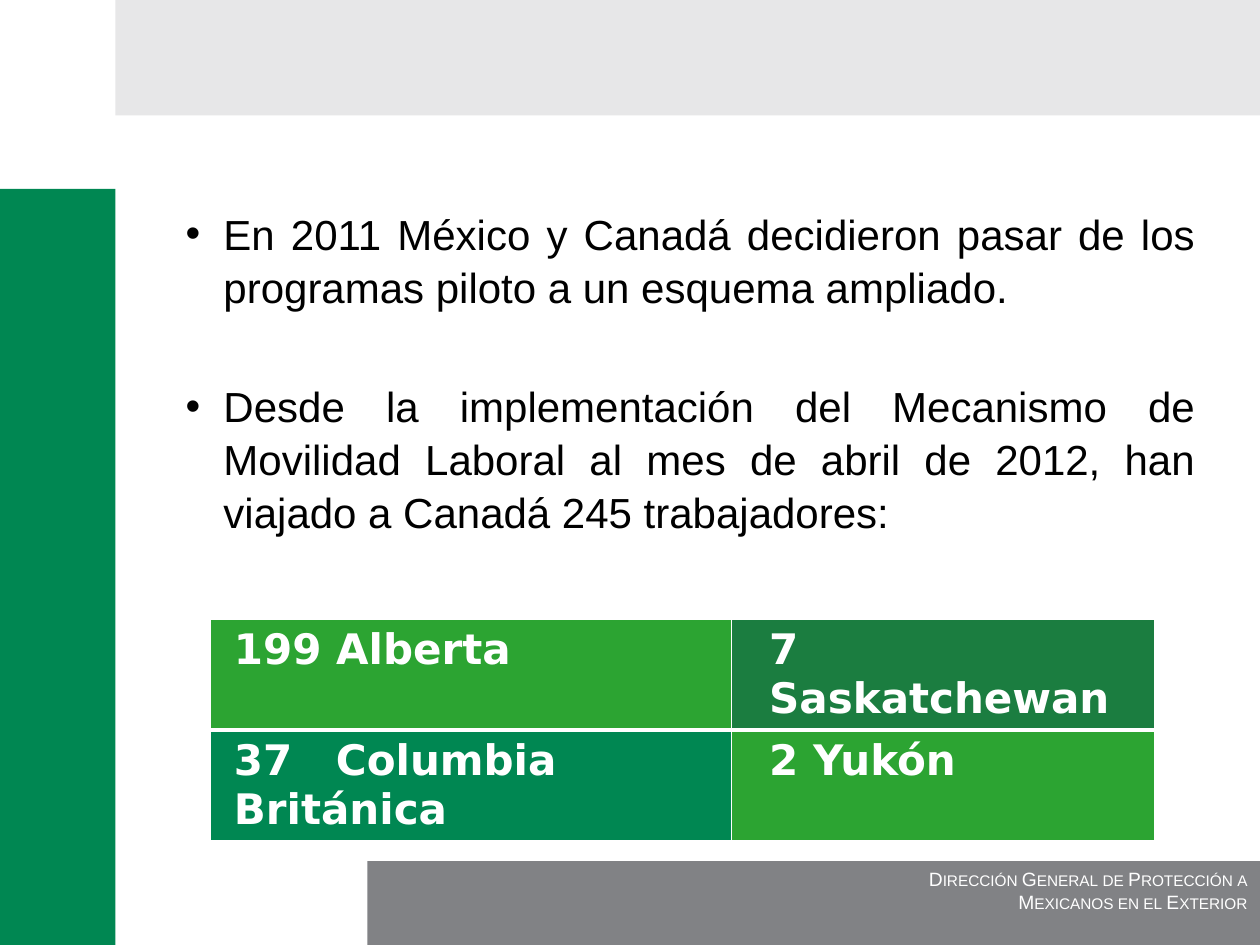
"""Build the slide on Mexican workers who have travelled to Canada."""
from lxml.etree import SubElement
from pptx import Presentation
from pptx.dml.color import RGBColor
from pptx.enum.shapes import MSO_SHAPE
from pptx.enum.text import MSO_ANCHOR, MSO_AUTO_SIZE, PP_ALIGN
from pptx.oxml import parse_xml
from pptx.oxml.ns import nsdecls, qn
from pptx.util import Pt

COLORS = {
    "white": "FFFFFF", "black": "000000", "green": "008752", "light green": "2CA432",
    "dark green": "1B7D40", "grey": "818285", "pale grey": "E7E7E8",
}
FORMATS = {
    "body": {"name": "Arial", "size": Pt(24), "color": "black"},
    "cell": {"name": "DejaVu Sans", "size": Pt(24), "bold": True, "color": "white"},
    "footer": {"name": "Arial", "size": Pt(11), "color": "white"},
}
BANDS = {
    "side": (0, 108, 66, 432, "green"),
    "footer": (210, 492, 510, 48, "grey"),
    "top": (66, 0, 654, 66, "pale grey"),
}
FOOTER_LINES = ["Dirección General de Protección a", "Mexicanos en el Exterior"]
BODY_LINES = [
    "En 2011 México y Canadá decidieron pasar de los programas piloto a un esquema ampliado.",
    "Desde la implementación del Mecanismo de Movilidad Laboral al mes de abril de 2012, "
    "han viajado a Canadá 245 trabajadores:",
]
CELLS = [
    [("199 Alberta", "light green"), ("7 Saskatchewan", "dark green")],
    [("37\tColumbia Británica", "green"), ("2 Yukón", "light green")],
]
COLUMNS = [(298, 13.7), (242, 21.6)]


def format_font(font, kind):
    for attribute, value in FORMATS[kind].items():
        if attribute == "color":
            font.color.rgb = RGBColor.from_string(COLORS[value])
        else:
            setattr(font, attribute, value)


def add_lines(frame, lines, kind, alignment, gap=0):
    for index, line in enumerate(lines):
        paragraph = frame.paragraphs[0] if index == 0 else frame.add_paragraph()
        paragraph.alignment = alignment
        paragraph.space_before = Pt(gap if index else 0)
        run = paragraph.add_run()
        run.text = line
        format_font(run.font, kind)


presentation = Presentation()
presentation.slide_width, presentation.slide_height = Pt(720), Pt(540)
slide = presentation.slides.add_slide(presentation.slide_layouts[1])
title = slide.shapes.title.element
title.getparent().remove(title)

bands = {}
for name, (left, top, width, height, color) in BANDS.items():
    shape = slide.shapes.add_shape(MSO_SHAPE.RECTANGLE, Pt(left), Pt(top), Pt(width), Pt(height))
    shape.shadow.inherit = False
    shape.fill.solid()
    shape.fill.fore_color.rgb = RGBColor.from_string(COLORS[color])
    shape.line.fill.background()
    bands[name] = shape

footer = bands["footer"].text_frame
footer.vertical_anchor = MSO_ANCHOR.TOP
add_lines(footer, FOOTER_LINES, "footer", PP_ALIGN.RIGHT)
for paragraph in footer.paragraphs:
    paragraph.runs[0].font._element.set("cap", "small")

body = slide.placeholders[1]
body.left, body.top, body.width, body.height = Pt(78), Pt(114), Pt(612), Pt(324)
body.text_frame.auto_size = MSO_AUTO_SIZE.NONE
add_lines(body.text_frame, BODY_LINES, "body", PP_ALIGN.JUSTIFY, gap=38)
for paragraph in body.text_frame.paragraphs:
    paragraph.line_spacing = 1.05
    properties = paragraph._p.get_or_add_pPr()
    properties.set("marL", str(Pt(42.5)))
    properties.set("indent", str(Pt(-21.6)))
    SubElement(properties, qn("a:buChar"), char="•")

table = slide.shapes.add_table(2, 2, Pt(120), Pt(354), Pt(540), Pt(126)).table
table.first_row = table.horz_banding = False
for column, (width, margin) in zip(table.columns, COLUMNS):
    column.width = Pt(width)
for row_index, row in enumerate(CELLS):
    for column_index, (text, color) in enumerate(row):
        cell = table.cell(row_index, column_index)
        cell.margin_left = Pt(COLUMNS[column_index][1])
        cell.fill.solid()
        cell.fill.fore_color.rgb = RGBColor.from_string(COLORS[color])
        add_lines(cell.text_frame, [text], "cell", PP_ALIGN.LEFT)
        if "\t" in text:
            tabs = SubElement(cell.text_frame.paragraphs[0]._p.get_or_add_pPr(), qn("a:tabLst"))
            SubElement(tabs, qn("a:tab"), pos=str(Pt(58.3)), algn="l")
        middle_edge = "T" if row_index else "B"
        for position, edge in enumerate("LRTB"):
            width = Pt(3 if edge == middle_edge else 1)
            border = parse_xml(
                f'<a:ln{edge} {nsdecls("a")} w="{width}"><a:solidFill>'
                f'<a:srgbClr val="{COLORS["white"]}"/></a:solidFill></a:ln{edge}>'
            )
            cell._tc.get_or_add_tcPr().insert(position, border)

presentation.save("out.pptx")
